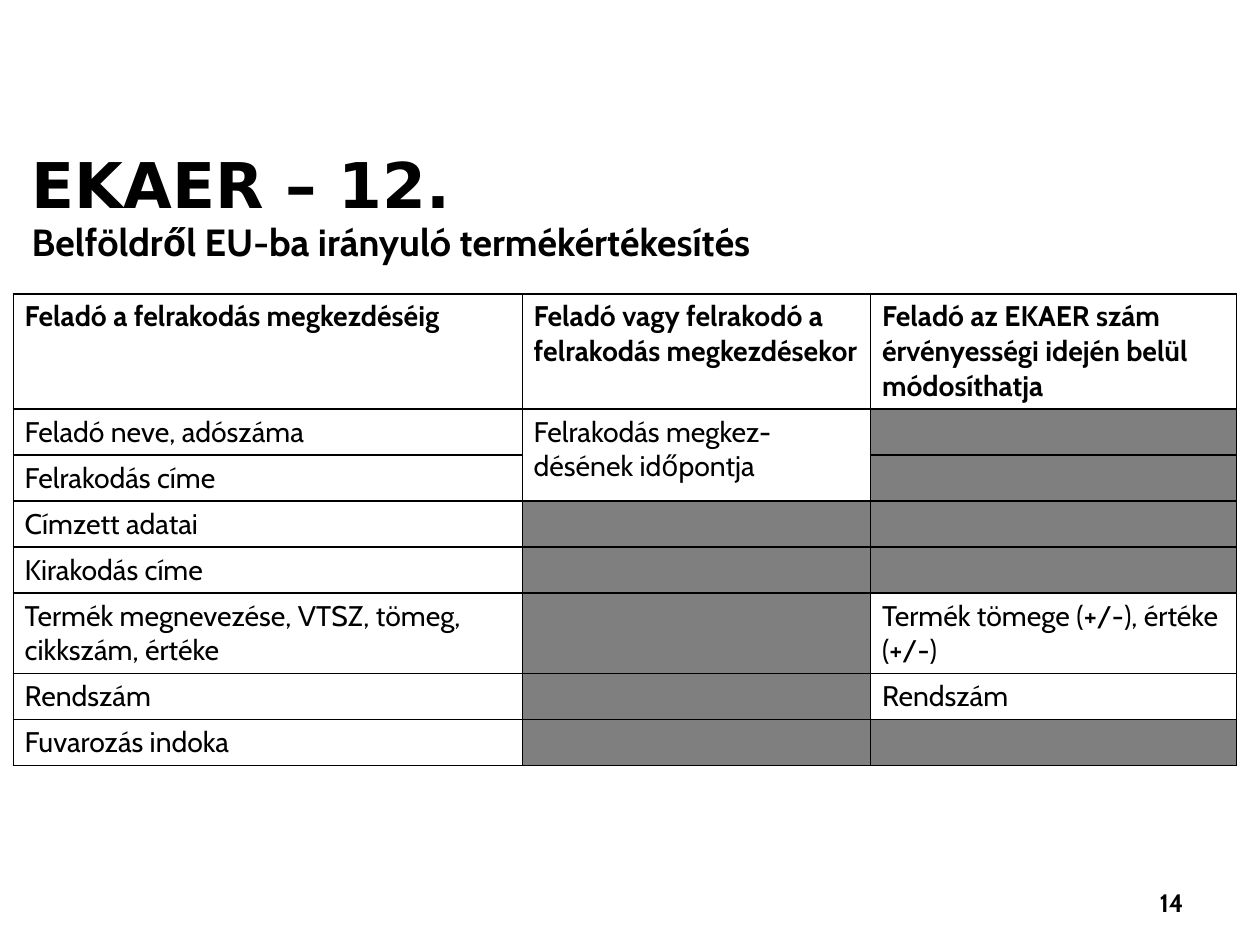
import dataclasses

import lxml.etree
import pptx
import pptx.dml.color
import pptx.enum.text
import pptx.oxml.ns
import pptx.util
from pptx.util import Cm


@dataclasses.dataclass(frozen=True)
class Theme:
    ink: str = "000000"
    paper: str = "FFFFFF"
    blocked: str = "7F7F7F"
    title_font: str = "DejaVu Sans"
    body_font: str = "Cabin"
    title_size: int = 40
    subtitle_size: int = 24
    table_size: int = 18
    number_size: int = 16
    border_width: int = 1


THEME = Theme()
ALIGN = pptx.enum.text.PP_ALIGN

HEADERS = [
    "Feladó a felrakodás megkezdéséig",
    "Feladó vagy felrakodó a felrakodás megkezdésekor",
    "Feladó az EKAER szám érvényességi idején belül módosíthatja",
]
# None marks a field that does not apply and is greyed out.
FIELDS = [
    ["Feladó neve, adószáma", "Felrakodás megkez-désének időpontja", None],
    ["Felrakodás címe", "", None],
    ["Címzett adatai", None, None],
    ["Kirakodás címe", None, None],
    ["Termék megnevezése, VTSZ, tömeg, cikkszám, értéke", None,
     "Termék tömege (+/-), értéke (+/-)"],
    ["Rendszám", None, "Rendszám"],
    ["Fuvarozás indoka", None, None],
]
COLUMN_WIDTHS = [11.4, 7.8, 8.2]
HEADER_HEIGHT, ROW_HEIGHT, TALL_HEIGHT = 2.57, 1.03, 1.77
TALL_ROW = 5


def rgb(color):
    return pptx.dml.color.RGBColor.from_string(color)


def write(frame, text, size, font=THEME.body_font, bold=False, align=ALIGN.LEFT):
    para = frame.paragraphs[0]
    para.alignment = align
    para.space_before = pptx.util.Pt(0)
    span = para.add_run()
    span.text = text
    span.font.name = font
    span.font.size = pptx.util.Pt(size)
    span.font.bold = bold
    span.font.color.rgb = rgb(THEME.ink)


def place(shape, left, top, width, height, inset_x, inset_y=0.15):
    """Position a text shape and give its frame wrapping, top-anchored text."""
    shape.left, shape.top = Cm(left), Cm(top)
    shape.width, shape.height = Cm(width), Cm(height)
    frame = shape.text_frame
    frame.word_wrap = True
    frame.auto_size = pptx.enum.text.MSO_AUTO_SIZE.NONE
    frame.vertical_anchor = pptx.enum.text.MSO_ANCHOR.TOP
    frame.margin_left = frame.margin_right = Cm(inset_x)
    frame.margin_top = frame.margin_bottom = Cm(inset_y)
    return frame


def add_heading(page, left, top, width):
    title_height = 1.65
    title, subtitle = page.placeholders
    write(place(title, left, top, width, title_height, 0.15), "EKAER – 12.",
          THEME.title_size, font=THEME.title_font, bold=True)
    write(place(subtitle, left, top + title_height, width, 1.4, 0.15),
          "Belföldről EU-ba irányuló termékértékesítés",
          THEME.subtitle_size, bold=True)


def add_borders(cell):
    properties = cell._tc.get_or_add_tcPr()
    qn = pptx.oxml.ns.qn
    for side in ("a:lnL", "a:lnR", "a:lnT", "a:lnB"):
        line = lxml.etree.SubElement(
            properties, qn(side), w=str(pptx.util.Pt(THEME.border_width)))
        fill = lxml.etree.SubElement(line, qn("a:solidFill"))
        lxml.etree.SubElement(fill, qn("a:srgbClr"), val=THEME.ink)


def add_field_table(page, left, top):
    rows = [HEADERS] + FIELDS
    heights = [HEADER_HEIGHT] + [ROW_HEIGHT] * len(FIELDS)
    heights[TALL_ROW] = TALL_HEIGHT
    table = page.shapes.add_table(
        len(rows), len(HEADERS), Cm(left), Cm(top),
        Cm(sum(COLUMN_WIDTHS)), Cm(sum(heights))).table
    table.first_row = table.horz_banding = False
    for column, width in zip(table.columns, COLUMN_WIDTHS):
        column.width = Cm(width)
    for index, (texts, height) in enumerate(zip(rows, heights)):
        table.rows[index].height = Cm(height)
        for cell, text in zip(table.rows[index].cells, texts):
            add_borders(cell)
            cell.fill.solid()
            cell.fill.fore_color.rgb = rgb(
                THEME.blocked if text is None else THEME.paper)
            if text:
                write(cell.text_frame, text, THEME.table_size, bold=index == 0)
    table.cell(1, 1).merge(table.cell(2, 1))


def add_page_number(page, left, top, width, height):
    box = page.shapes.add_textbox(0, 0, 0, 0)
    write(place(box, left, top, width, height, 0.28), "14",
          THEME.number_size, bold=True, align=ALIGN.RIGHT)


def main():
    deck = pptx.Presentation()
    deck.slide_width, deck.slide_height = Cm(28.22), Cm(21.16)
    page = deck.slides.add_slide(deck.slide_layouts[0])
    add_heading(page, 0.56, 3.1, 26.9)
    add_field_table(page, 0.3, 6.58)
    add_page_number(page, 23.44, 19.71, 3.35, 1.45)
    deck.save("out.pptx")


if __name__ == "__main__":
    main()
